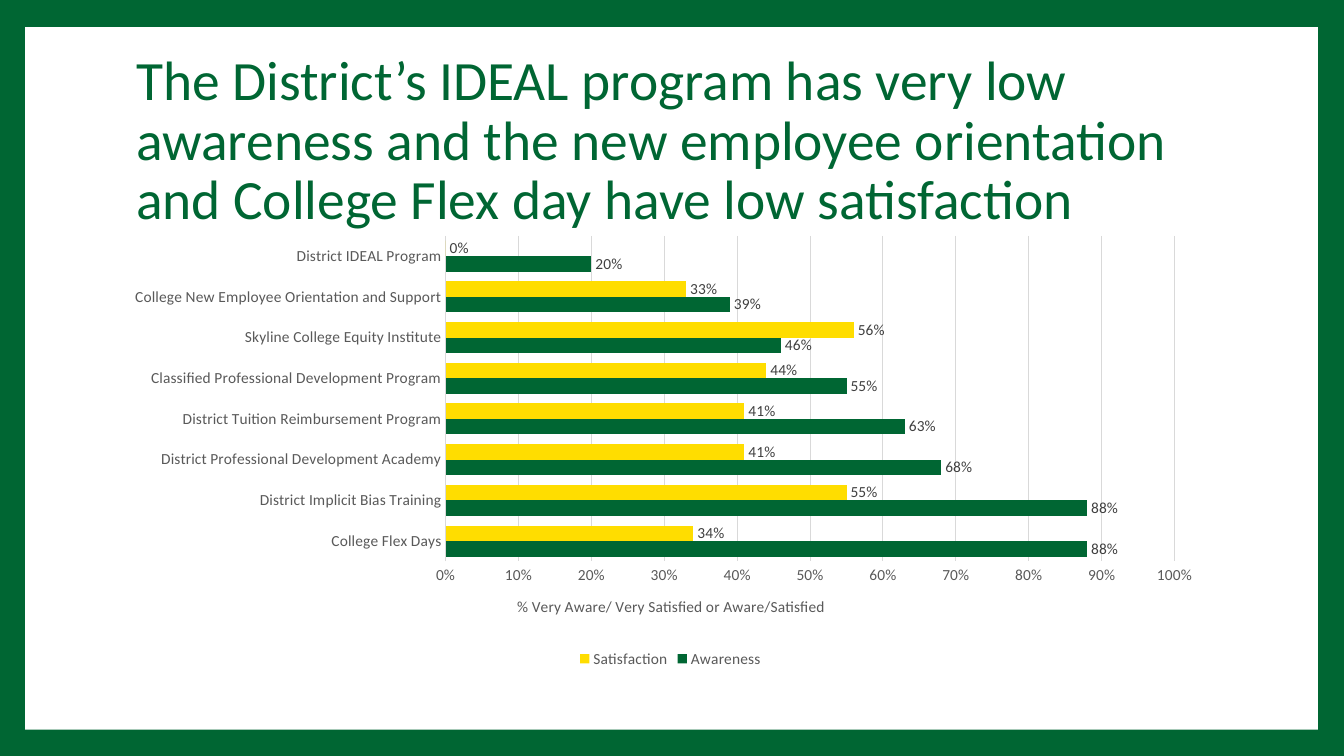
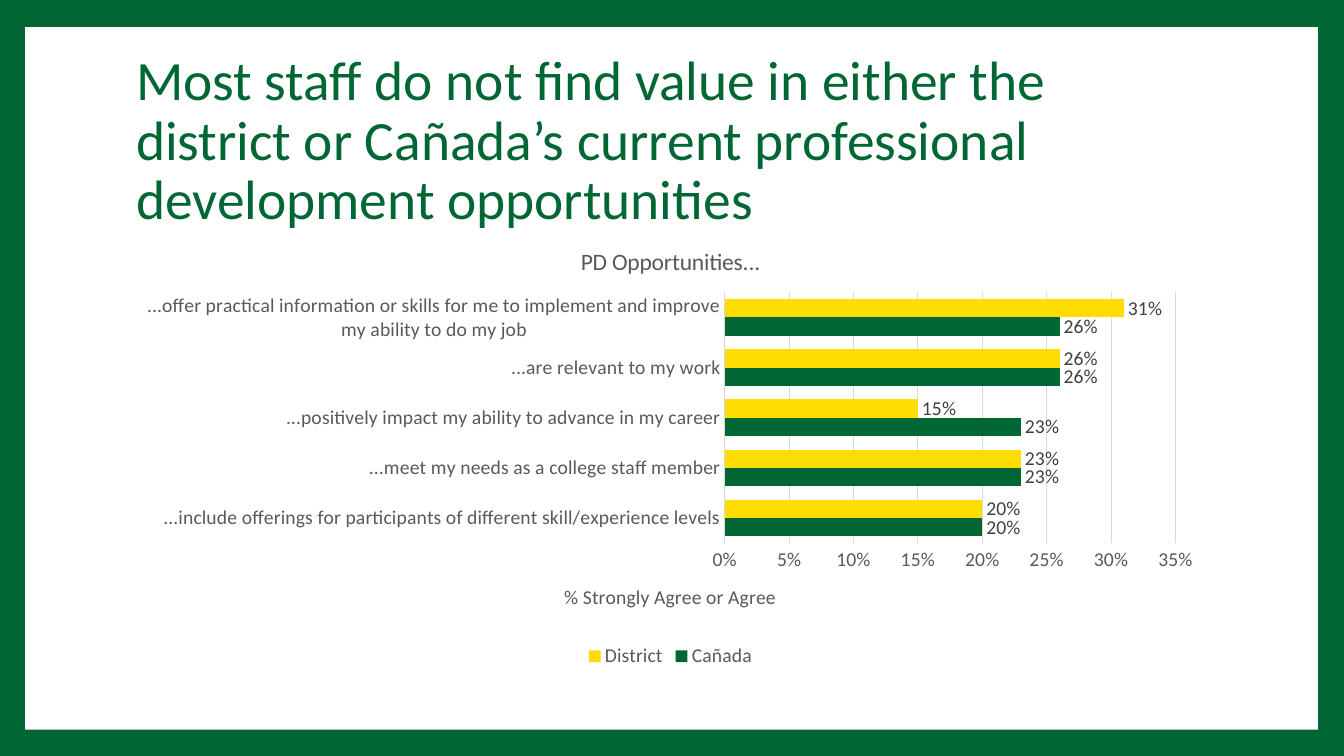
"""Two framed slides, each with a title and a clustered bar chart."""
from lxml import etree
from pptx import Presentation
from pptx.chart.data import CategoryChartData
from pptx.dml.color import RGBColor as RGB
from pptx.enum.chart import XL_CHART_TYPE as KIND, XL_LABEL_POSITION as SPOT
from pptx.enum.chart import XL_LEGEND_POSITION as SIDE, XL_TICK_MARK as TICK
from pptx.enum.shapes import MSO_SHAPE as SHAPE
from pptx.enum.text import MSO_ANCHOR as ANCHOR, MSO_AUTO_SIZE as FIT, PP_ALIGN as ALIGN
from pptx.oxml.ns import qn
from pptx.util import Inches, Pt

HUES = {"green": "006633", "gold": "FFDD00", "white": "FFFFFF",
        "text": "595959", "label": "404040", "grid": "D9D9D9"}
FACE = "Calibri"
LEFT, TOP, WIDE, HIGH = 1.25, 2.25, 10.8, 4.42

SLIDES = [
    {
        "title": "The District’s IDEAL program has very low awareness and the new "
                 "employee orientation and College Flex day have low satisfaction",
        "head": None,
        "axis": "% Very Aware/ Very Satisfied or Aware/Satisfied",
        "size": 11, "gap": 63, "top": 1, "step": 0.1,
        "plot": (4.42, 2.34, 7.23, 3.23),
        "note": (5.1, 5.89),
        "cats": ["College Flex Days", "District Implicit Bias Training",
                 "District Professional Development Academy",
                 "District Tuition Reimbursement Program",
                 "Classified Professional Development Program",
                 "Skyline College Equity Institute",
                 "College New Employee Orientation and Support",
                 "District IDEAL Program"],
        "rows": {"Awareness": [0.88, 0.88, 0.68, 0.63, 0.55, 0.46, 0.39, 0.2],
                 "Satisfaction": [0.34, 0.55, 0.41, 0.41, 0.44, 0.56, 0.33, 0]},
    },
    {
        "title": "Most staff do not find value in either the district or Cañada’s "
                 "current professional development opportunities",
        "head": "PD Opportunities...",
        "axis": "% Strongly Agree or Agree",
        "size": 14, "gap": 74, "top": 0.35, "step": 0.05,
        "plot": (7.19, 2.9, 4.47, 2.49),
        "note": (5.56, 5.75),
        "cats": ["...include offerings for participants of different skill/experience levels",
                 "...meet my needs as a college staff member",
                 "...positively impact my ability to advance in my career",
                 "...are relevant to my work",
                 "...offer practical information or skills for me to implement "
                 "and improve my ability to do my job"],
        "rows": {"Cañada": [0.2, 0.23, 0.23, 0.26, 0.26],
                 "District": [0.2, 0.23, 0.15, 0.26, 0.31]},
    },
]


def style(font, size, hue):
    font.name = FACE
    font.size = Pt(size)
    font.bold = False
    font.color.rgb = RGB.from_string(HUES[hue])


def place(part, left, top, *span):
    box = part.find(qn("c:layout"))
    if box is None:
        box = etree.Element(qn("c:layout"))
        part.insert(0, box)
    hand = etree.SubElement(box, qn("c:manualLayout"))
    if span:
        etree.SubElement(hand, qn("c:layoutTarget")).set("val", "inner")
    for key in ("x", "y"):
        etree.SubElement(hand, qn(f"c:{key}Mode")).set("val", "edge")
    sizes = (left - LEFT, top - TOP, *span)
    for key, size, full in zip("xywh", sizes, (WIDE, HIGH, WIDE, HIGH)):
        etree.SubElement(hand, qn(f"c:{key}")).set("val", str(size / full))


prs = Presentation()
prs.slide_width, prs.slide_height = Inches(13.33), Inches(7.5)
back = prs.slide_master.background.fill
back.solid()
back.fore_color.rgb = RGB.from_string(HUES["green"])

for data in SLIDES:
    page = prs.slides.add_slide(prs.slide_layouts[5])
    panel = page.shapes.add_shape(SHAPE.RECTANGLE, Inches(0.25), Inches(0.27),
                                  Inches(12.82), Inches(6.97))
    panel.shadow.inherit = False
    panel.fill.solid()
    panel.fill.fore_color.rgb = RGB.from_string(HUES["white"])
    panel.line.fill.background()
    page.shapes._spTree.insert(2, panel._element)

    title = page.shapes.title
    title.left, title.top = Inches(LEFT), Inches(0.67)
    title.width, title.height = Inches(WIDE), Inches(1.48)
    frame = title.text_frame
    frame.auto_size = FIT.NONE
    frame.word_wrap = True
    frame.vertical_anchor = ANCHOR.MIDDLE
    para = frame.paragraphs[0]
    para.alignment = ALIGN.LEFT
    para.line_spacing = 0.9
    run = para.add_run()
    run.text = data["title"]
    style(run.font, 39.6, "green")

    size = data["size"]
    table = CategoryChartData(number_format="0%")
    table.categories = data["cats"]
    for name, vals in data["rows"].items():
        table.add_series(name, vals)
    chart = page.shapes.add_chart(KIND.BAR_CLUSTERED, Inches(LEFT), Inches(TOP),
                                  Inches(WIDE), Inches(HIGH), table).chart
    style(chart.font, size, "text")
    chart.has_title = bool(data["head"])
    if data["head"]:
        run = chart.chart_title.text_frame.paragraphs[0].add_run()
        run.text = data["head"]
        style(run.font, 16.8, "text")

    chart.has_legend = True
    chart.legend.position = SIDE.BOTTOM
    chart.legend.include_in_layout = False
    style(chart.legend.font, size, "text")

    cat, val = chart.category_axis, chart.value_axis
    for axis in (cat, val):
        axis.major_tick_mark = axis.minor_tick_mark = TICK.NONE
        style(axis.tick_labels.font, size, "text")
    val.minimum_scale, val.maximum_scale = 0, data["top"]
    val.major_unit = data["step"]
    val.tick_labels.number_format = "0%"
    val.tick_labels.number_format_is_linked = False
    val.format.line.fill.background()
    val.has_major_gridlines = True
    for line in (cat.format.line, val.major_gridlines.format.line):
        line.color.rgb = RGB.from_string(HUES["grid"])
        line.width = Pt(0.75)
    run = val.axis_title.text_frame.paragraphs[0].add_run()
    run.text = data["axis"]
    style(run.font, size, "text")
    place(val.axis_title._element, *data["note"])
    place(chart._chartSpace.chart.plotArea, *data["plot"])

    plot = chart.plots[0]
    plot.gap_width, plot.overlap = data["gap"], 0
    plot.vary_by_categories = False
    for row, hue in zip(plot.series, ("green", "gold")):
        row.format.fill.solid()
        row.format.fill.fore_color.rgb = RGB.from_string(HUES[hue])
        tags = row.data_labels
        tags.show_value = True
        tags.position = SPOT.OUTSIDE_END
        tags.number_format = "0%"
        tags.number_format_is_linked = False
        style(tags.font, size, "label")

prs.save("out.pptx")
